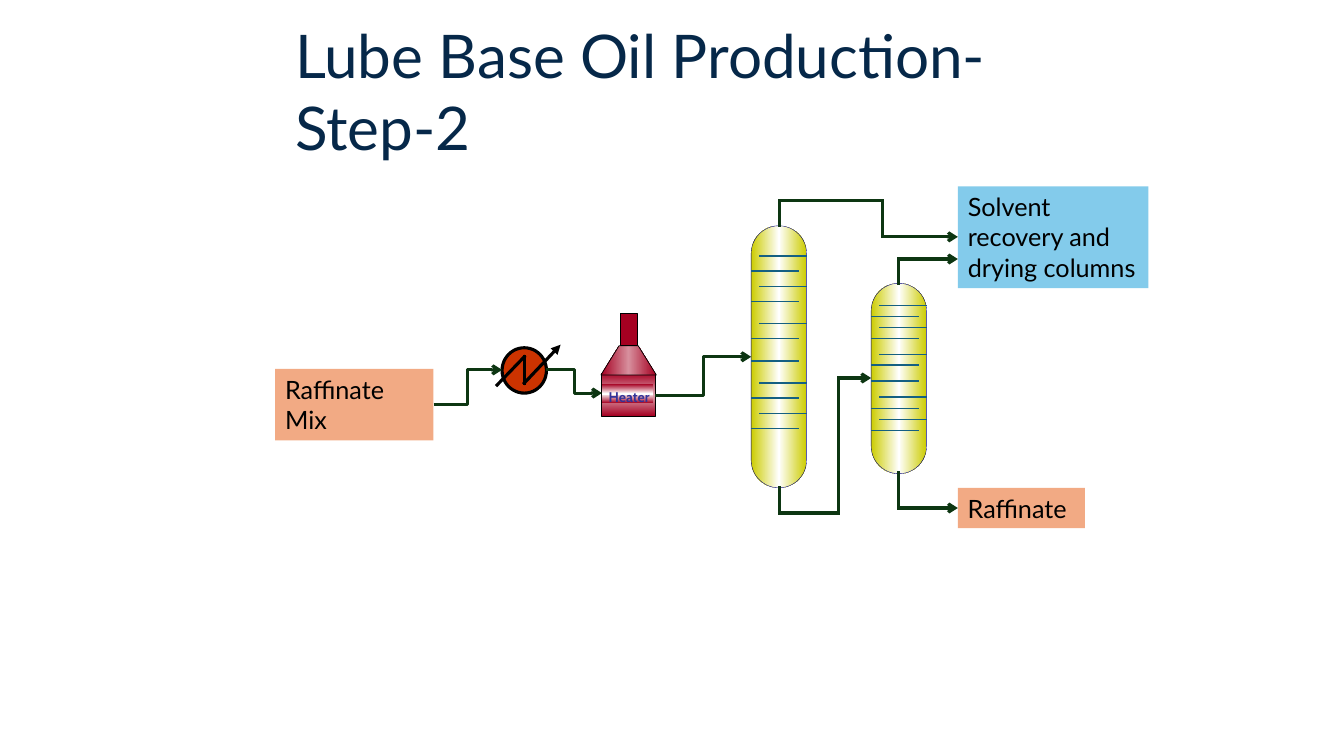
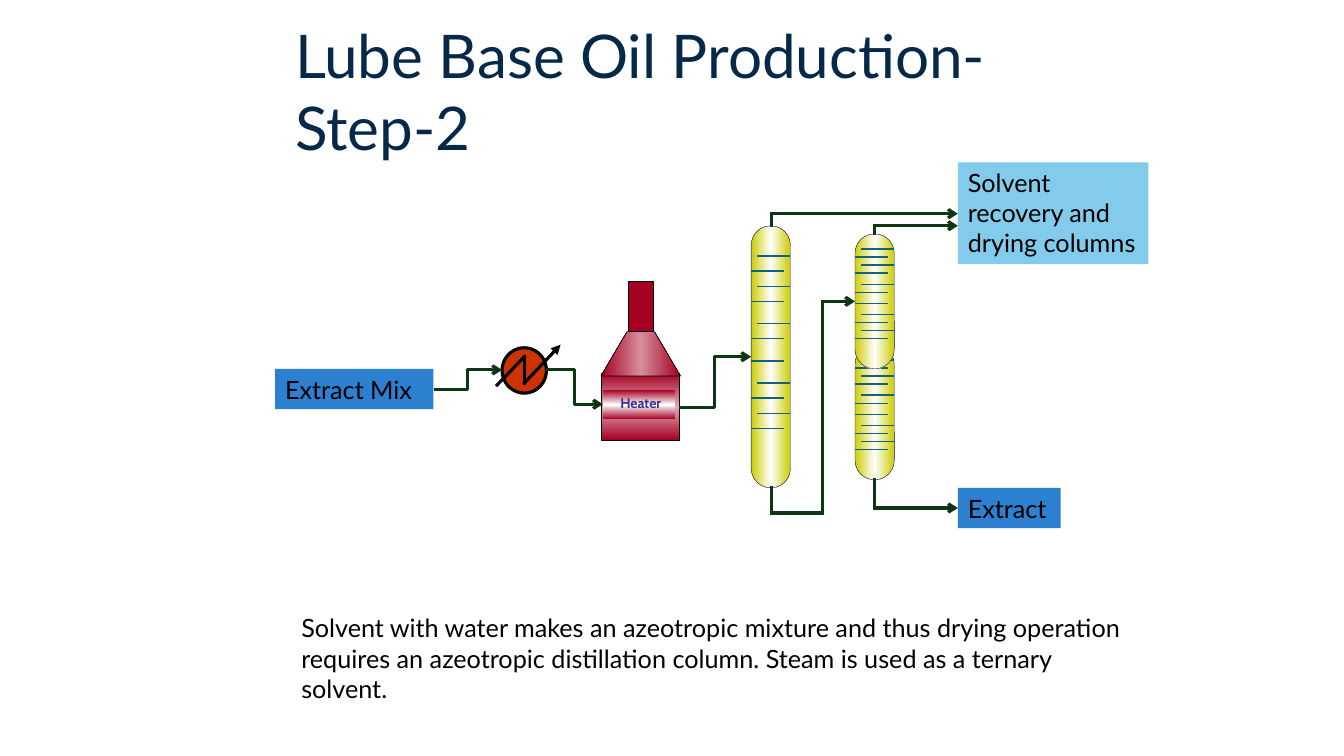
from copy import deepcopy
from itertools import pairwise

from pptx import Presentation
from pptx.dml.color import RGBColor
from pptx.enum.shapes import MSO_CONNECTOR as Route, MSO_SHAPE as Preset
from pptx.enum.text import MSO_ANCHOR as Anchor, PP_ALIGN as Align
from pptx.oxml.ns import qn
from pptx.util import Pt

PX = 9144

NAVY = RGBColor(0x06, 0x28, 0x49)
BLACK = RGBColor(0, 0, 0)
WHITE = RGBColor(255, 255, 255)
PIPE = RGBColor(0x0D, 0x36, 0x12)
SALMON = RGBColor(0xF2, 0xAA, 0x84)
BLUE = RGBColor(0x2D, 0x7F, 0xCF)
SKY = RGBColor(0x83, 0xCB, 0xEB)
ORANGE = RGBColor(0xCC, 0x33, 0x00)
CRIMSON = RGBColor(0xA5, 0x00, 0x21)
ROSE = RGBColor(0xE1, 0xA9, 0xB4)
DUSK = RGBColor(0xD7, 0x8F, 0x9D)
OLIVE = RGBColor(0xCC, 0xCC, 0x00)
RIM = RGBColor(0, 0, 0x80)
TRAY = RGBColor(0x15, 0x60, 0x82)
INDIGO = RGBColor(0x33, 0x33, 0x99)

TITLE = ("Lube Base Oil Production- Step-2", (283, 13, 864, 94), None, 43, NAVY)
SOLVENT = "Solvent recovery and drying columns"
NOTE = (
    "Solvent with water makes an azeotropic mixture and thus drying operation "
    "requires an azeotropic distillation column. Steam is used as a ternary solvent."
)
COLUMN_HEIGHT = 260
TRAYS = (
    (30, True), (45, False), (60, True), (75, False), (97, True), (112, False),
    (134, False), (156, True), (171, False), (186, True), (201, False),
)
COIL = ((493, 382), (520, 354), (520, 380), (556, 342))

STEPS = (
    {
        "labels": (
            ("Raffinate", (950, 484, 126, 40), SALMON, 18, BLACK),
            ("Raffinate Mix", (273, 366, 157, 71), SALMON, 18, BLACK),
            (SOLVENT, (950, 185, 189, 101), SKY, 18, BLACK),
        ),
        "furnace": (596, 370, 54, 43),
        "hood": ((596, 372), (614, 343), (633, 343), (651, 372)),
        "stack": (615, 311, 17, 32),
        "band": (597, 381, 51, 19),
        "columns": ((745, 224, 55, 260), (864, 281, 55, 189)),
        "elbows": (
            ((430, 401), (498, 367)),
            ((542, 367), (597, 390)),
            ((650, 392), (745, 354)),
        ),
        "risers": (
            ((773, 484), (773, 509), (832, 509), (832, 375), (864, 375)),
            ((773, 224), (773, 199), (875, 199), (875, 235), (950, 235)),
            ((891, 469), (891, 504), (950, 504)),
            ((891, 281), (891, 257), (950, 257)),
        ),
    },
    {
        "labels": (
            ("Extract", (950, 484, 102, 40), BLUE, 18, BLACK),
            ("Extract Mix", (273, 366, 157, 40), BLUE, 18, BLACK),
            (SOLVENT, (950, 161, 189, 101), SKY, 18, BLACK),
            (NOTE, (289, 603, 850, 71), None, 18, BLACK),
        ),
        "furnace": (596, 370, 78, 67),
        "hood": ((596, 373), (622, 329), (649, 329), (675, 373)),
        "stack": (623, 279, 25, 50),
        "band": (598, 387, 72, 29),
        "columns": ((848, 342, 39, 134), (745, 224, 39, 260), (848, 232, 39, 134)),
        "elbows": (
            ((430, 386), (498, 367)),
            ((542, 367), (598, 401)),
            ((673, 404), (745, 354)),
        ),
        "risers": (
            ((765, 484), (765, 509), (816, 509), (816, 299), (848, 299)),
            ((765, 224), (765, 212), (950, 212)),
            ((867, 476), (867, 504), (950, 504)),
            ((867, 232), (867, 224), (950, 224)),
        ),
    },
)


def paint(shape, colors, angle=0, edge=None, width=0.5):
    shape.shadow.inherit = False
    if len(colors) == 1:
        shape.fill.solid()
        shape.fill.fore_color.rgb = colors[0]
    else:
        shape.fill.gradient()
        shape.fill.gradient_angle = angle
        stop_list = shape._element.spPr.find(".//" + qn("a:gsLst"))
        stop_list.insert(1, deepcopy(stop_list[0]))
        for stop, position, color in zip(shape.fill.gradient_stops, (0, 0.5, 1), colors):
            stop.position = position
            stop.color.rgb = color
    if edge is None:
        shape.line.fill.background()
    else:
        shape.line.color.rgb = edge
        shape.line.width = Pt(width)
    return shape


def trace(shapes, points, color, width, route=Route.STRAIGHT, tip=None):
    for start, end in pairwise(points):
        leg = shapes.add_connector(route, *(v * PX for v in start + end))
        leg.line.color.rgb = color
        leg.line.width = Pt(width)
        properties = leg._element.spPr
        stroke = properties.find(qn("a:ln"))
        if len(points) > 2:
            stroke.set("cap", "sq")
        if tip and end == points[-1]:
            stroke.append(stroke.makeelement(qn("a:tailEnd"), {"type": tip}))
        properties.append(properties.makeelement(qn("a:effectLst"), {}))


deck = Presentation()
deck.slide_width = 1333 * PX
deck.slide_height = 750 * PX

for step in STEPS:
    shapes = deck.slides.add_slide(deck.slide_layouts[6]).shapes

    for text, box, fill, size, color in (TITLE, *step["labels"]):
        label = shapes.add_textbox(*(v * PX for v in box))
        if fill is not None:
            label.fill.solid()
            label.fill.fore_color.rgb = fill
        frame = label.text_frame
        frame.word_wrap = True
        frame.text = text
        font = frame.paragraphs[0].runs[0].font
        font.name = "Lato"
        font.size = Pt(size)
        font.color.rgb = color

    exchanger = shapes.add_shape(Preset.OVAL, *(v * PX for v in (498, 345, 44, 45)))
    paint(exchanger, (ORANGE,), edge=BLACK, width=2.25)
    trace(shapes, COIL, BLACK, 2.25, tip="triangle")

    furnace = shapes.add_shape(Preset.RECTANGLE, *(v * PX for v in step["furnace"]))
    paint(furnace, (CRIMSON, ROSE, CRIMSON), angle=90, edge=BLACK)
    outline = shapes.build_freeform(*step["hood"][0], scale=float(PX))
    outline.add_line_segments(step["hood"][1:], close=True)
    paint(outline.convert_to_shape(), (CRIMSON, DUSK, CRIMSON), edge=BLACK)
    stack = shapes.add_shape(Preset.RECTANGLE, *(v * PX for v in step["stack"]))
    paint(stack, (CRIMSON,), edge=BLACK)

    band = shapes.add_shape(Preset.RECTANGLE, *(v * PX for v in step["band"]))
    paint(band, (CRIMSON, WHITE, CRIMSON), angle=90)
    frame = band.text_frame
    frame.margin_left, frame.margin_top = 3 * PX, 4 * PX
    frame.margin_right = frame.margin_bottom = 0
    frame.vertical_anchor = Anchor.TOP
    frame.text = "Heater"
    frame.paragraphs[0].alignment = Align.CENTER
    font = frame.paragraphs[0].runs[0].font
    font.name = "Cabin"
    font.size = Pt(10)
    font.bold = True
    font.color.rgb = INDIGO

    for left, top, width, height in step["columns"]:
        column = shapes.add_shape(
            Preset.DOUBLE_BRACKET, left * PX, top * PX, width * PX, height * PX
        )
        column.adjustments[0] = 0.5
        paint(column, (OLIVE, WHITE, OLIVE), edge=RIM, width=0.25)
        gap = round(width / 7)
        for offset, on_right in TRAYS:
            y = top + round(offset * height / COLUMN_HEIGHT)
            x = left + gap if on_right else left
            trace(shapes, ((x, y), (x + width - gap, y)), TRAY, 1)

    for ends in step["elbows"]:
        trace(shapes, ends, PIPE, 2.25, route=Route.ELBOW, tip="arrow")
    for points in step["risers"]:
        trace(shapes, points, PIPE, 2.25, tip="arrow")

deck.save("out.pptx")
